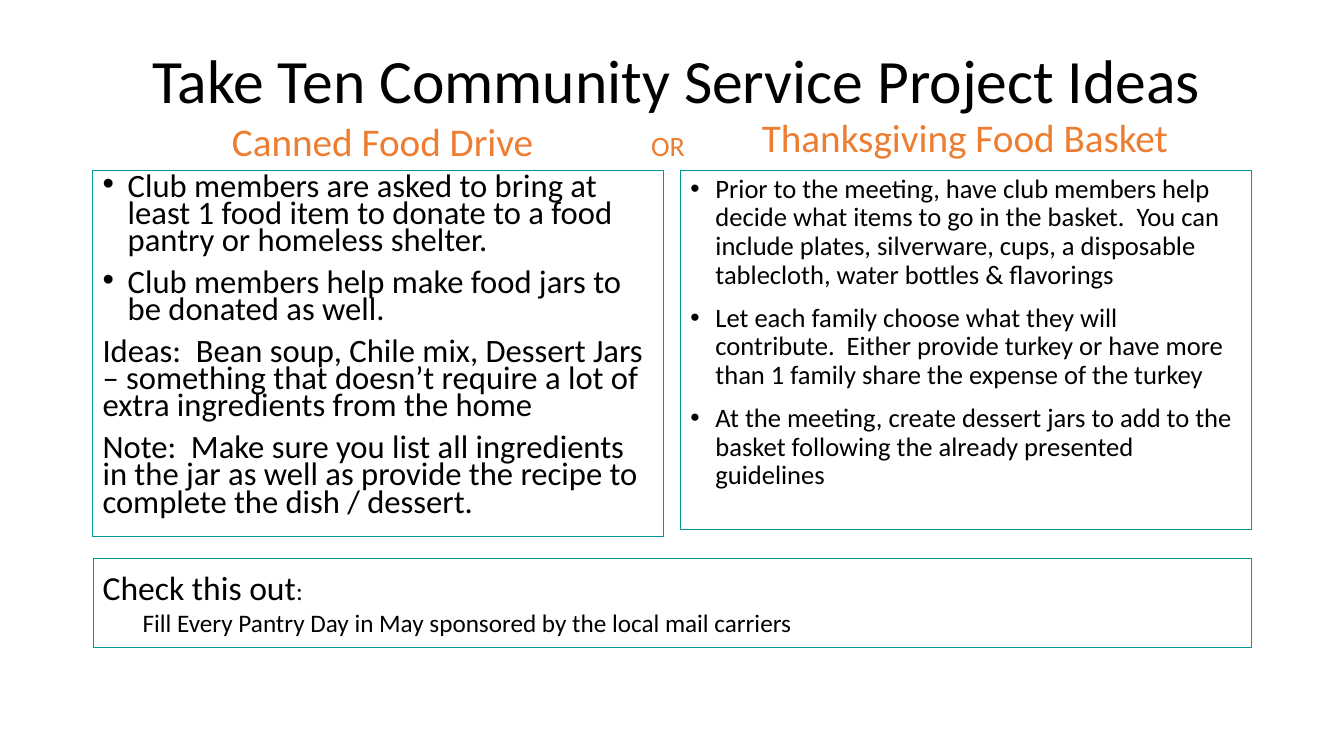
from lxml import etree
from pptx import Presentation
from pptx.dml.color import RGBColor
from pptx.enum.shapes import MSO_SHAPE
from pptx.enum.text import MSO_ANCHOR, PP_ALIGN
from pptx.oxml.ns import qn
from pptx.util import Pt

RECTANGLE = MSO_SHAPE.RECTANGLE
TOP, MIDDLE = MSO_ANCHOR.TOP, MSO_ANCHOR.MIDDLE
LEFT, CENTER = PP_ALIGN.LEFT, PP_ALIGN.CENTER

COLORS = {"text": "000000", "heading": "ED7D31", "frame": "009999"}
FONT = "Calibri"
HANGING = 18

DRIVE_BULLETS = [
    "Club members are asked to bring at least 1 food item to donate to a food pantry or homeless shelter.",
    "Club members help make food jars to be donated as well.",
]
DRIVE_NOTES = [
    "Ideas:  Bean soup, Chile mix, Dessert Jars – something that doesn’t require a lot of extra "
    "ingredients from the home",
    "Note:  Make sure you list all ingredients in the jar as well as provide the recipe to complete "
    "the dish / dessert.",
]
BASKET_BULLETS = [
    "Prior to the meeting, have club members help decide what items to go in the basket.  You can "
    "include plates, silverware, cups, a disposable tablecloth, water bottles & flavorings",
    "Let each family choose what they will contribute.  Either provide turkey or have more than 1 "
    "family share the expense of the turkey",
    "At the meeting, create dessert jars to add to the basket following the already presented guidelines",
]


def add_frame(page, box):
    frame = page.shapes.add_shape(RECTANGLE, *map(Pt, box))
    frame.shadow.inherit = False
    frame.fill.background()
    frame.line.color.rgb = RGBColor.from_string(COLORS["frame"])
    frame.line.width = Pt(0.75)
    return frame


def add_text_box(page, box):
    return page.shapes.add_textbox(*map(Pt, box))


def set_indent(para, left, first=0, bullet=None):
    properties = para._p.get_or_add_pPr()
    properties.set("marL", str(Pt(left)))
    properties.set("indent", str(Pt(first)))
    if bullet:
        etree.SubElement(properties, qn("a:buFont")).set("typeface", "Arial")
        etree.SubElement(properties, qn("a:buChar")).set("char", bullet)


def add_span(para, text, size, color="text"):
    span = para.add_run()
    span.text = text
    formats = {"name": FONT, "size": Pt(size)}
    for name, value in formats.items():
        setattr(span.font, name, value)
    span.font.color.rgb = RGBColor.from_string(COLORS[color])


def fill_text(shape, paragraphs, anchor=TOP, **formats):
    """Each paragraph is a list of (text, size, color) spans."""
    frame = shape.text_frame
    frame.word_wrap = True
    frame.vertical_anchor = anchor
    formats = {"alignment": LEFT, **formats}
    for index, spans in enumerate(paragraphs):
        para = frame.add_paragraph() if index else frame.paragraphs[0]
        for name, value in formats.items():
            setattr(para, name, value)
        for span in spans:
            add_span(para, *span)
    return frame.paragraphs


def add_heading(page, box, text, size, color="heading", **formats):
    fill_text(add_text_box(page, box), [[(text, size, color)]], **formats)


def add_idea_panel(page, box, bullets, notes, size, spacing):
    panel = add_frame(page, box)
    paragraphs = fill_text(panel, [[(text, size)] for text in bullets + notes],
                           line_spacing=spacing, space_before=Pt(10))
    for para in paragraphs[:len(bullets)]:
        set_indent(para, HANGING, -HANGING, "•")


def add_check_panel(page, box):
    left, top, width, height = box
    add_frame(page, box)
    label = add_text_box(page, (left - 0.7, top + 2.5, width - 5, height - 5))
    paragraphs = fill_text(label, [
        [("Check this out", 24), (":", 18)],
        [("Fill Every Pantry Day in May sponsored by the local mail carriers", 18)],
    ])
    set_indent(paragraphs[1], 28.5)


def build_ideas_page(page):
    left, right, width, top = 66.2, 486, 407.9, 121.7

    # Title and headings
    add_heading(page, (64.8, 21.6, 828, 76.3), " Take Ten Community Service Project Ideas", 44,
                "text", anchor=MIDDLE, alignment=CENTER, line_spacing=0.9)
    add_heading(page, (left, 79.9, width, 41), " Canned Food Drive", 28, alignment=CENTER)
    add_heading(page, (right, 77.4, width - 1.5, 41), "Thanksgiving Food Basket", 28, alignment=CENTER)
    add_heading(page, (458, 88.6, 41, 31.7), "OR", 20)

    # Two project ideas side by side
    add_idea_panel(page, (left, top, width, 261.7), DRIVE_BULLETS, DRIVE_NOTES, 23.3, 0.7)
    add_idea_panel(page, (right, top, width, 256.3), BASKET_BULLETS, [], 19, 0.9)

    # Closing tip
    add_check_panel(page, (66.95, 398.9, 827.3, 63.4))


def main():
    deck = Presentation()
    deck.slide_width, deck.slide_height = Pt(960), Pt(540)
    build_ideas_page(deck.slides.add_slide(deck.slide_layouts[6]))
    deck.save("out.pptx")


if __name__ == "__main__":
    main()
